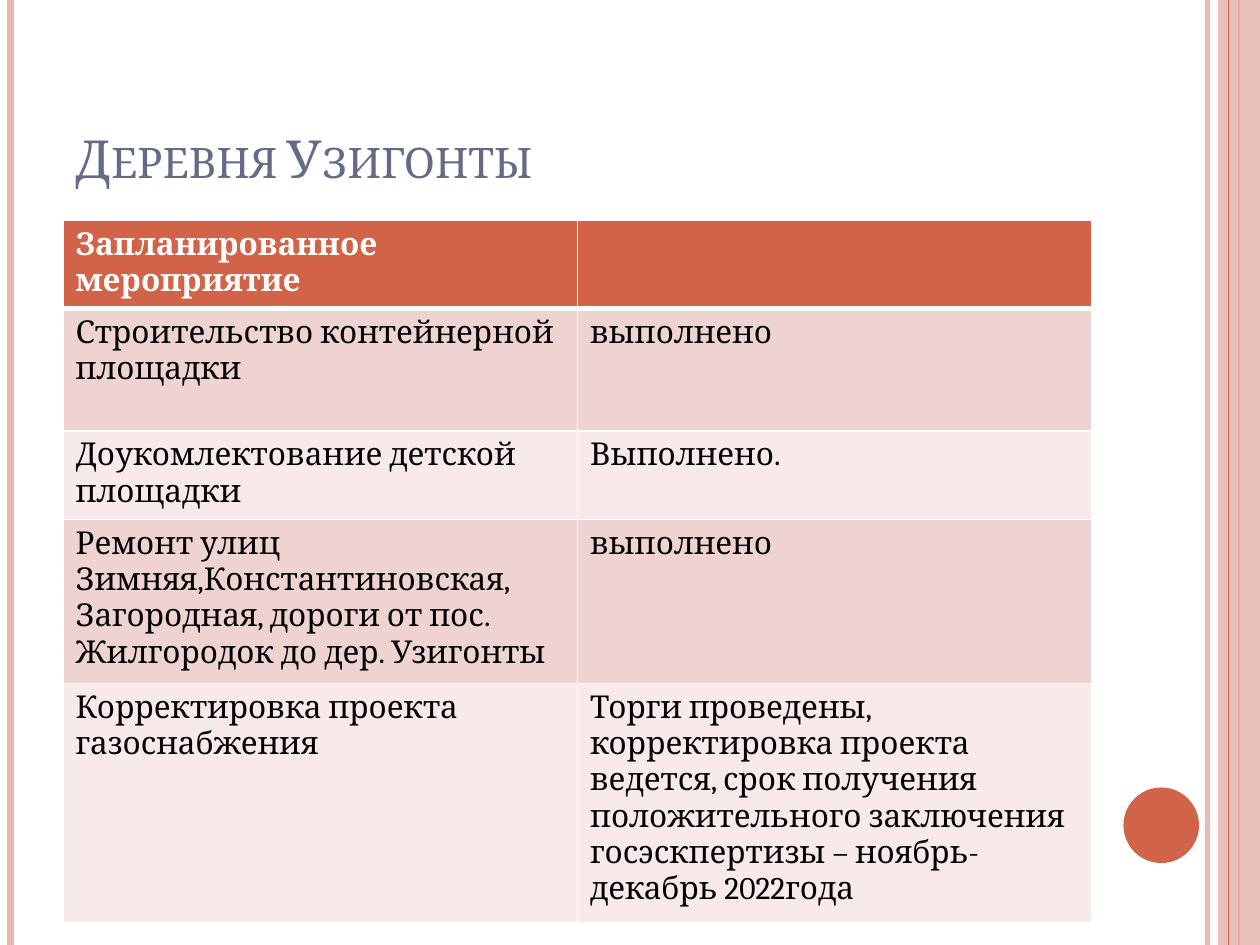
from lxml.etree import SubElement
from pptx import Presentation
from pptx.dml.color import RGBColor
from pptx.enum.shapes import MSO_CONNECTOR, MSO_SHAPE
from pptx.enum.text import MSO_ANCHOR
from pptx.oxml.ns import qn
from pptx.util import Pt

RUST, ROSE, WHITE = "D16349", "E5B7B1", "FFFFFF"
BANDS = ["EED3D0", "F7EAE9"]


def paint(target, color, alpha=None):
    """Give a fill a solid colour, with alpha in percent."""
    target.solid()
    target.fore_color.rgb = RGBColor.from_string(color)
    if alpha:
        tint = target._xPr.find(".//" + qn("a:srgbClr"))
        SubElement(tint, qn("a:alpha"), val=str(alpha * 1000))


def style(para, size, color, bold=False):
    for run in para.runs:
        font = run.font
        font.name, font.size, font.bold = "Cambria", Pt(size), bold
        paint(font.fill, color)


deck = Presentation()
deck.slide_width, deck.slide_height = Pt(720), Pt(540)
slide = deck.slides.add_slide(deck.slide_layouts[6])
shapes = slide.shapes

# Side stripes: the band lies above the first three and below the last
stripes = [(690, ROSE, 3, 93), (6, ROSE, 4.5, None),
           (708, RUST, 1.5, None), (702, RUST, 0.75, None)]
for x, color, width, alpha in stripes:
    if x == 702:
        band = shapes.add_shape(MSO_SHAPE.RECTANGLE, Pt(696), 0, Pt(24), Pt(540))
        band.shadow.inherit = False
        paint(band.fill, ROSE, 87)
        band.line.fill.background()
    stripe = shapes.add_connector(MSO_CONNECTOR.STRAIGHT, Pt(x), 0, Pt(x), Pt(540))
    stripe.line.width = Pt(width)
    paint(stripe.line.fill, color, alpha)
    SubElement(stripe._element.spPr, qn("a:effectLst"))

dot = shapes.add_shape(MSO_SHAPE.OVAL, Pt(642), Pt(450), Pt(43.2), Pt(43.2))
dot.shadow.inherit = False
paint(dot.fill, RUST)
dot.line.fill.background()

# Title
frame = shapes.add_textbox(Pt(36), Pt(21.6), Pt(588), Pt(90)).text_frame
frame.word_wrap = True
frame.vertical_anchor = MSO_ANCHOR.BOTTOM
frame.text = "Деревня Узигонты"
title = frame.paragraphs[0]
style(title, 30, "646B86")
title.runs[0].font._element.set("cap", "small")

# Table of planned works
rows = [
    (48, "Запланированное мероприятие", ""),
    (70, "Строительство контейнерной площадки", "выполнено"),
    (49, "Доукомлектование детской площадки", "Выполнено."),
    (90, "Ремонт улиц Зимняя,Константиновская, Загородная, "
         "дороги от пос. Жилгородок до дер. Узигонты", "выполнено"),
    (131, "Корректировка проекта газоснабжения",
     "Торги проведены, корректировка проекта ведется, срок получения "
     "положительного заключения госэскпертизы – ноябрь-декабрь 2022года"),
]
total = sum(row[0] for row in rows)
table = shapes.add_table(len(rows), 2, Pt(36), Pt(126), Pt(588), Pt(total)).table
for r, (height, *texts) in enumerate(rows):
    table.rows[r].height = Pt(height)
    head = r == 0
    for c, text in enumerate(texts):
        cell = table.cell(r, c)
        props = cell._tc.get_or_add_tcPr()
        for side in "LRTB":
            thick = (head and side == "B") or (r == 1 and side == "T")
            edge = SubElement(props, qn("a:ln" + side), w=str(Pt(3 if thick else 1)))
            solid = SubElement(edge, qn("a:solidFill"))
            SubElement(solid, qn("a:srgbClr"), val=WHITE)
        paint(cell.fill, RUST if head else BANDS[(r - 1) % 2])
        cell.text_frame.text = text
        style(cell.text_frame.paragraphs[0], 18, WHITE if head else "000000", head)

deck.save("out.pptx")
